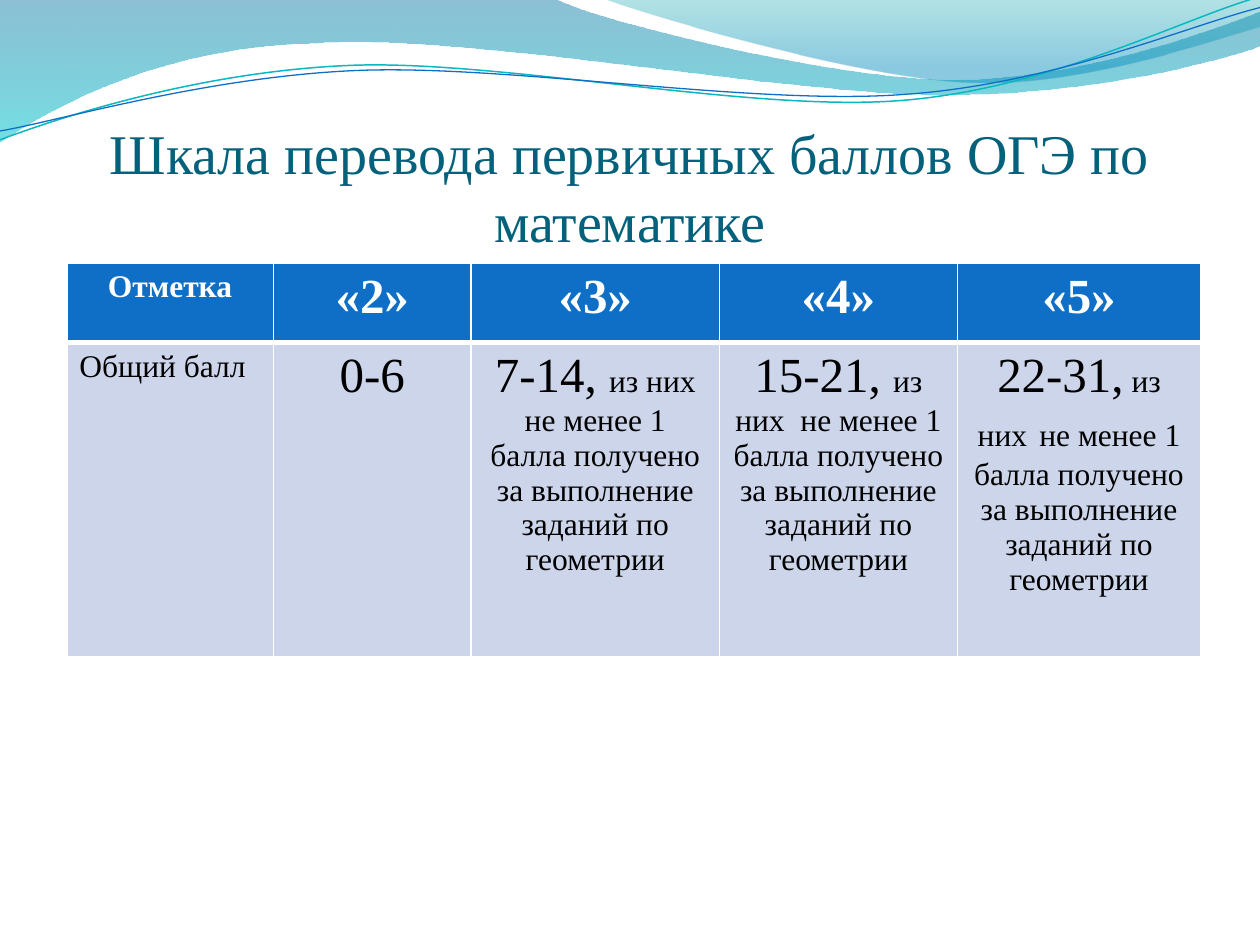
from lxml import etree
from pptx import Presentation
from pptx.dml.color import RGBColor
from pptx.enum.text import MSO_ANCHOR, PP_ALIGN
from pptx.oxml.ns import qn
from pptx.util import Inches, Pt

CENTER, JUSTIFY = PP_ALIGN.CENTER, PP_ALIGN.JUSTIFY
BOTTOM = MSO_ANCHOR.BOTTOM

FONT = "Times New Roman"
BLUE = RGBColor(0x0F, 0x6F, 0xC6)
TEAL = RGBColor(0x0A, 0xB8, 0xBF)
DARK_TEAL = RGBColor(0x04, 0x61, 0x7B)
PALE = RGBColor(0xCC, 0xD5, 0xEA)
WHITE = RGBColor(0xFF, 0xFF, 0xFF)
BLACK = RGBColor(0, 0, 0)
BIG, SMALL = 28, 18

# Content: each cell is a list of (text, size) runs
TITLE = "Шкала перевода первичных баллов ОГЭ по математике"
CONDITION = "не менее 1 балла получено за выполнение заданий по геометрии"
HEADER = [[("Отметка", SMALL)]] + [[(f"«{n}»", BIG)] for n in range(2, 6)]
SCORES = [
    [("Общий балл", SMALL)],
    [("0-6", BIG)],
    [("7-14, ", BIG), ("из них", SMALL), (" ", BIG), (CONDITION, SMALL)],
    [("15-21, ", BIG), ("из них  " + CONDITION, SMALL)],
    [("22-31,", BIG), (" из них", SMALL), (" ", BIG), (CONDITION, SMALL)],
]
COL_WIDTHS = [1.64, 1.57, 1.97, 1.89, 1.93]
ROW_HEIGHTS = [0.63, 2.49]

# Header waves: two numbers are a line's end, six are a Bezier segment.
# Gradient stops are (position, colour, opacity in percent).
BANDS = [
    ([(0, 0), (4.4, -0.01), (4.76, 0.17, 6.64, 0.63, 7.58, 0.63),
      (8.53, 0.63, 9.58, 0.26, 10, 0.09), (10.01, 0.36),
      (9.83, 0.44, 8.7, 0.76, 7.46, 0.75), (6.22, 0.75, 3.82, 0.28, 2.57, 0.34),
      (1.29, 0.36, 0.46, 0.83, -0.01, 1.13)],
     [(0, RGBColor(0x00, 0x74, 0xA1), 45), (1, RGBColor(0x00, 0xC6, 0xCF), 55)]),
    ([(4.79, -0.01), (5.09, 0.11, 6.82, 0.62, 7.69, 0.65),
      (8.56, 0.69, 9.61, 0.32, 10, 0.21), (10, 0)],
     [(0, RGBColor(0x00, 0xA1, 0xA9), 30), (0.8, RGBColor(0x00, 0x8B, 0xBF), 45)]),
]
WAVES = [
    ([(0, 1.11), (0.48, 0.93, 1.58, 0.57, 2.77, 0.52),
      (3.95, 0.47, 5.93, 0.89, 7.13, 0.8), (8.33, 0.71, 9.38, 0.15, 9.98, -0.02)],
     TEAL, 0.85),
    ([(0, 1.04), (0.47, 0.96, 1.64, 0.61, 2.83, 0.56),
      (4.03, 0.51, 5.97, 0.84, 7.17, 0.75), (8.36, 0.67, 9.41, 0.21, 10, 0.06)],
     BLUE, 0.75),
]


def add_curve(s, segments, close):
    """Build the outline through the end points, then bend its Bezier segments."""
    ends = [(Inches(seg[-2]), Inches(seg[-1])) for seg in segments]
    builder = s.shapes.build_freeform(*ends[0])
    builder.add_line_segments(ends[1:], close=close)
    sp = builder.convert_to_shape()
    sp.shadow.inherit = False
    lines = list(sp._element.spPr.iter(qn("a:lnTo")))
    for line, seg in zip(lines, segments[1:]):
        if len(seg) == 6:
            line.tag = qn("a:cubicBezTo")
            for i, k in enumerate((0, 2)):
                pt = etree.Element(qn("a:pt"), x=str(Inches(seg[k]) - sp.left),
                                   y=str(Inches(seg[k + 1]) - sp.top))
                line.insert(i, pt)
    return sp


def add_band(s, segments, stops):
    sp = add_curve(s, segments, True)
    sp.line.fill.background()
    sp.fill.gradient()
    sp.fill.gradient_angle = 270
    for stop, (position, color, _) in zip(sp.fill.gradient_stops, stops):
        stop.position = position
        stop.color.rgb = color
    colors = sp._element.spPr.iter(qn("a:srgbClr"))
    for clr, (_, _, opacity) in zip(list(colors), stops):
        etree.SubElement(clr, qn("a:alpha")).set("val", str(opacity * 1000))


def add_wave(s, segments, color, width):
    sp = add_curve(s, segments, False)
    sp.fill.background()
    sp.line.color.rgb = color
    sp.line.width = Pt(width)


def add_runs(p, runs, color, bold=False):
    for text, size in runs:
        r = p.add_run()
        r.text = text
        r.font.name = FONT
        r.font.size = Pt(size)
        r.font.bold = bold
        r.font.color.rgb = color


def set_borders(cell, top, bottom):
    tcPr = cell._tc.get_or_add_tcPr()
    sides = [("a:lnL", 1), ("a:lnR", 1), ("a:lnT", top), ("a:lnB", bottom)]
    for i, (tag, width) in enumerate(sides):
        ln = etree.Element(qn(tag), w=str(Pt(width)))
        fill = etree.SubElement(ln, qn("a:solidFill"))
        etree.SubElement(fill, qn("a:srgbClr"), val=str(WHITE))
        tcPr.insert(i, ln)


prs = Presentation()
prs.slide_width, prs.slide_height = Inches(10), Inches(7.5)
s = prs.slides.add_slide(prs.slide_layouts[6])

# Header waves
for segments, stops in BANDS:
    add_band(s, segments, stops)
for segments, color, width in WAVES:
    add_wave(s, segments, color, width)

# Title
tf = s.shapes.add_textbox(Inches(0.5), Inches(0.76), Inches(9), Inches(1.25)).text_frame
tf.word_wrap = True
tf.vertical_anchor = BOTTOM
tf.margin_left = tf.margin_right = tf.margin_bottom = 0
tf.margin_top = Inches(0.05)
tf.paragraphs[0].alignment = CENTER
add_runs(tf.paragraphs[0], [(TITLE, 32)], DARK_TEAL)

# Table of grades and scores
table = s.shapes.add_table(
    2, len(COL_WIDTHS), Inches(0.53), Inches(2.09),
    Inches(sum(COL_WIDTHS)), Inches(sum(ROW_HEIGHTS))).table
for col, width in zip(table.columns, COL_WIDTHS):
    col.width = Inches(width)
for row, height in zip(table.rows, ROW_HEIGHTS):
    row.height = Inches(height)
for i, row in enumerate([HEADER, SCORES]):
    is_header = i == 0
    for j, runs in enumerate(row):
        cell = table.cell(i, j)
        cell.fill.solid()
        cell.fill.fore_color.rgb = BLUE if is_header else PALE
        set_borders(cell, *((1, 3) if is_header else (3, 1)))
        p = cell.text_frame.paragraphs[0]
        p.alignment = CENTER if is_header or j else JUSTIFY
        add_runs(p, runs, WHITE if is_header else BLACK, is_header)

prs.save("out.pptx")
